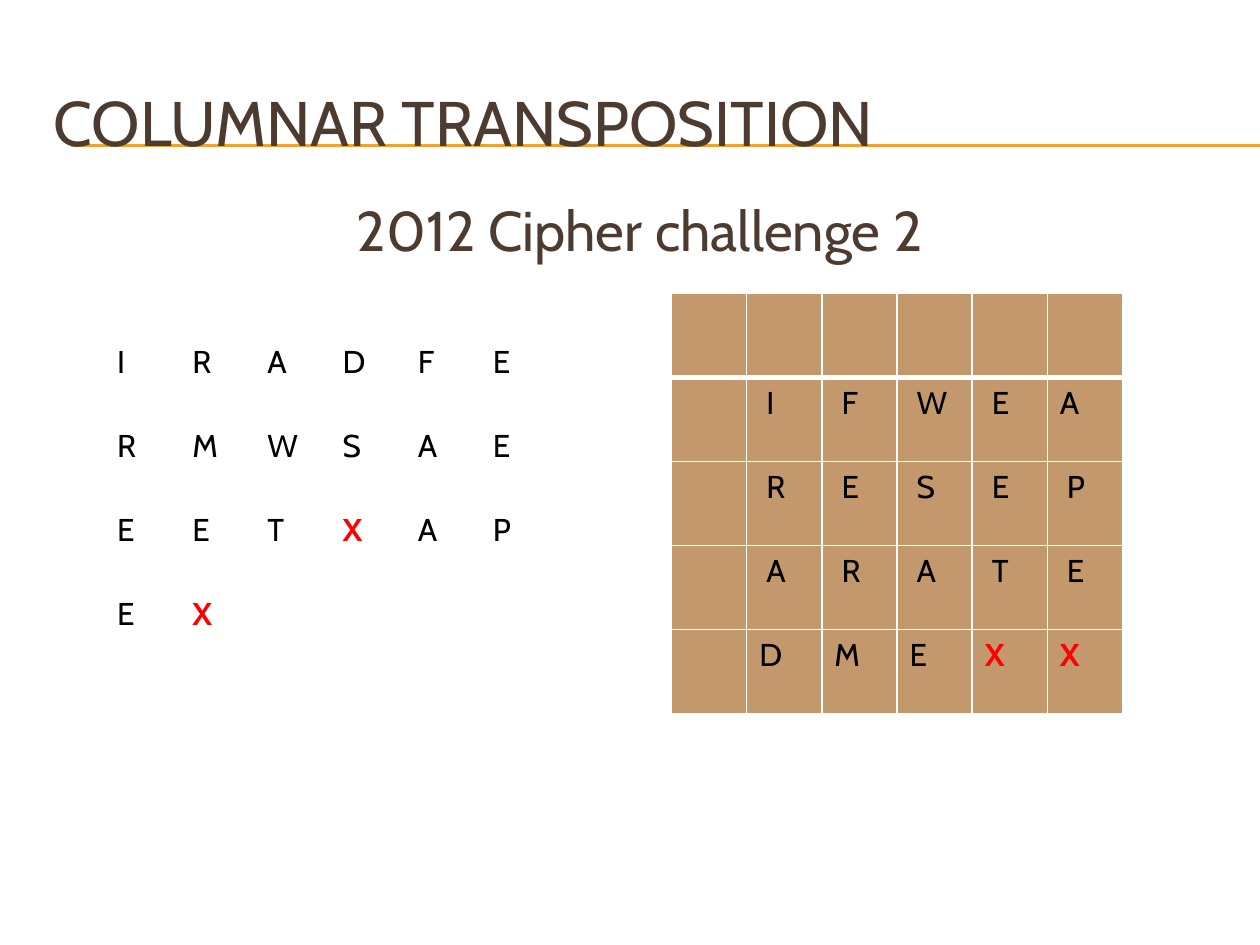
from lxml.etree import SubElement as Sub
from pptx import Presentation
from pptx.dml.color import RGBColor as Rgb
from pptx.enum.shapes import MSO_CONNECTOR as Conn
from pptx.enum.text import MSO_ANCHOR as Anchor, PP_ALIGN as Align
from pptx.oxml.ns import qn
from pptx.util import Inches, Pt

BROWN, GOLD, TAN = "4E3B30", "F0A22E", "C3986D"
BLACK, RED, WHITE = "000000", "FF0000", "FFFFFF"


def color(code):
    return Rgb.from_string(code)


class Deck:
    font = "Cabin"

    def __init__(self, slide):
        self.slide = slide

    def label(self, para, text, size, code, bold=False):
        run = para.add_run()
        run.text = text
        form = {"name": self.font, "size": Pt(size), "bold": bold}
        for key, value in form.items():
            setattr(run.font, key, value)
        run.font.color.rgb = color(code)

    def text(self, box, text, size, anchor, align):
        frame = self.slide.shapes.add_textbox(*map(Inches, box)).text_frame
        form = {"word_wrap": True, "vertical_anchor": anchor}
        for key, value in form.items():
            setattr(frame, key, value)
        para = frame.paragraphs[0]
        para.alignment = align
        self.label(para, text, size, BROWN)

    def line(self, left, right, y):
        ends = map(Inches, (left, y, right, y))
        line = self.slide.shapes.add_connector(Conn.STRAIGHT, *ends)
        line.line.color.rgb = color(GOLD)
        line.line.width = Pt(0.75)
        Sub(line._element.spPr, qn("a:effectLst"))

    def edge(self, cell, side, width):
        line = Sub(cell._tc.get_or_add_tcPr(), qn("a:ln" + side),
                   w=str(Pt(width)))
        fill = Sub(line, qn("a:solidFill"))
        Sub(fill, qn("a:srgbClr"), val=WHITE)

    def table(self, left, top, rows, fill=None):
        wide, high = 3.58, 2 / 3
        count = len(rows[0])
        box = map(Inches, (left, top, wide, high * len(rows)))
        table = self.slide.shapes.add_table(len(rows), count, *box).table
        table.first_row = table.horz_banding = False
        for col in table.columns:
            col.width = Inches(wide / count)
        for r, row in enumerate(rows):
            table.rows[r].height = Inches(high)
            for c, text in enumerate(row):
                cell = table.cell(r, c)
                # A thick rule parts the first row from the rest
                for side in "LRTB":
                    thick = (r, side) in ((0, "B"), (1, "T"))
                    self.edge(cell, side, 3 if thick else 1)
                if fill:
                    cell.fill.solid()
                    cell.fill.fore_color.rgb = color(fill)
                else:
                    cell.fill.background()
                if text:
                    pad = text == "X"
                    self.label(cell.text_frame.paragraphs[0], text, 18,
                               RED if pad else BLACK, pad)


def main():
    show = Presentation()
    show.slide_width, show.slide_height = Inches(10), Inches(7.5)
    deck = Deck(show.slides.add_slide(show.slide_layouts[6]))

    # Rule under the title
    for y in (1.15, 1.16):
        deck.line(0.56, 10, y)

    # Title and subtitle
    deck.text((0.33, 0.5, 9.5, 0.92), "COLUMNAR TRANSPOSITION", 36,
              Anchor.MIDDLE, Align.LEFT)
    deck.text((0.33, 1.5, 9.5, 4.95), "2012 Cipher challenge 2", 32,
              Anchor.TOP, Align.CENTER)

    # Cipher text, with X as padding
    deck.table(0.83, 2.67, [
        list("IRADFE"),
        list("RMWSAE"),
        list("EETXAP"),
        ["E", "X", "", "", "", ""],
    ])

    # Plain text in the key grid
    deck.table(5.33, 2.33, [
        [""] * 6,
        ["", " I", " F", " W", " E", "A"],
        ["", " R", " E", " S", " E", " P"],
        ["", " A", " R", " A", " T", " E"],
        ["", *"DMEXX"],
    ], TAN)

    show.save("out.pptx")


if __name__ == "__main__":
    main()
